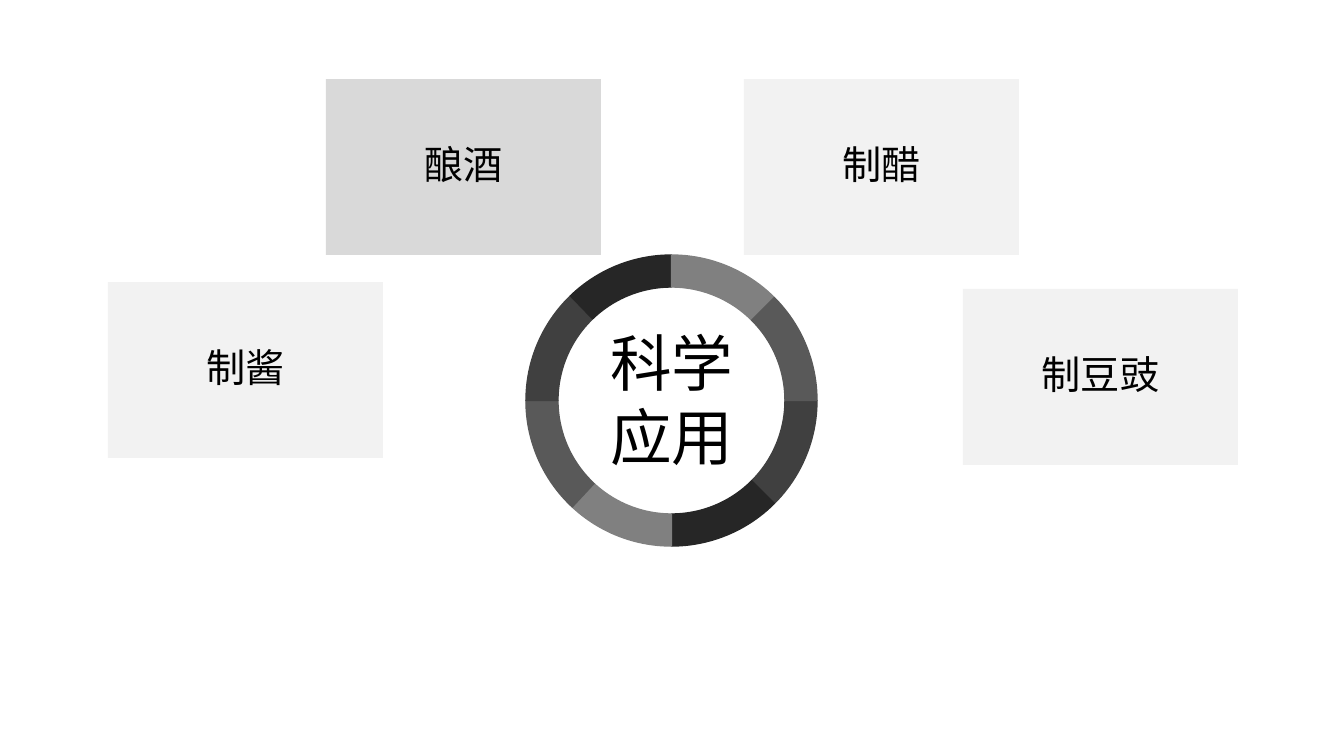
from pptx import Presentation
from pptx.dml.color import RGBColor
from pptx.enum.shapes import MSO_SHAPE as Shape
from pptx.enum.text import MSO_ANCHOR as Anchor, MSO_AUTO_SIZE as Fit, PP_ALIGN as Align
from pptx.util import Pt

PX = 914400 / 100.8
BLACK = RGBColor(0x00, 0x00, 0x00)
INK = RGBColor(0x26, 0x26, 0x26)
DARK = RGBColor(0x40, 0x40, 0x40)
MID = RGBColor(0x59, 0x59, 0x59)
GRAY = RGBColor(0x80, 0x80, 0x80)
SILVER = RGBColor(0xD9, 0xD9, 0xD9)
PALE = RGBColor(0xF2, 0xF2, 0xF2)


def emu(*sizes):
    return [round(size * PX) for size in sizes]


def write(para, text, size):
    para.alignment = Align.CENTER
    run = para.add_run()
    run.text = text
    run.font.size = Pt(size)
    run.font.name = "Arial"
    run.font.color.rgb = BLACK


deck = Presentation()
deck.slide_width, deck.slide_height = emu(1344, 756)
slide = deck.slides.add_slide(deck.slide_layouts[6])
shapes = slide.shapes

# Ring: eight arcs clockwise from the right, edges in degrees
edges = [0, 45, 90, 133, 180, 226, 270, 315, 0]
tones = [DARK, INK, GRAY, MID] * 2
for start, end, tone in zip(edges, edges[1:], tones):
    arc = shapes.add_shape(Shape.BLOCK_ARC, *emu(526, 255, 291, 291))
    arc.shadow.inherit = False
    # An angle unit is 1/60000 degree, an adjustment unit 1/100000
    arc.adjustments[0] = start * 0.6
    arc.adjustments[1] = end * 0.6
    arc.adjustments[2] = 0.11
    arc.fill.solid()
    arc.fill.fore_color.rgb = tone
    arc.line.color.rgb = tone
    arc.line.width = Pt(1)

# Uses around the ring
uses = [
    ("制酱", 108, 282, PALE),
    ("酿酒", 326, 79, SILVER),
    ("制醋", 744, 79, PALE),
    ("制豆豉", 963, 289, PALE),
]
for name, left, top, tone in uses:
    box = shapes.add_shape(Shape.RECTANGLE, *emu(left, top, 275, 176))
    box.shadow.inherit = False
    box.fill.solid()
    box.fill.fore_color.rgb = tone
    box.line.fill.background()
    box.text_frame.vertical_anchor = Anchor.MIDDLE
    para = box.text_frame.paragraphs[0]
    para.line_spacing = 0.9
    para.space_before = Pt(10)
    write(para, name, 28)

# Title in the ring
title = shapes.add_textbox(*emu(600, 320, 144, 159)).text_frame
title.word_wrap = True
title.auto_size = Fit.SHAPE_TO_FIT_TEXT
write(title.paragraphs[0], "科学应用", 44)

deck.save("out.pptx")
